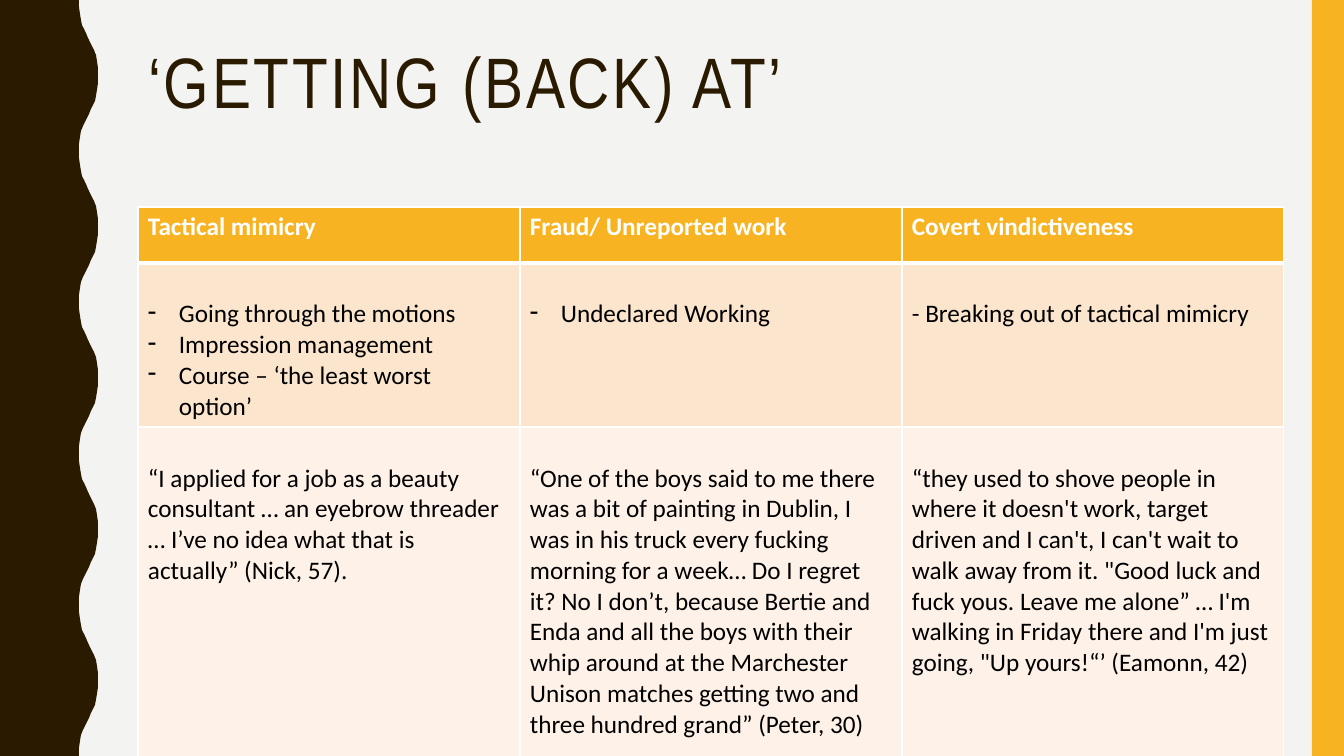
from dataclasses import dataclass
from lxml.etree import SubElement as Sub
from pptx import Presentation
from pptx.dml.color import RGBColor as RGB
from pptx.enum.shapes import MSO_SHAPE as SHAPE
from pptx.enum.text import MSO_ANCHOR as ANCHOR, MSO_AUTO_SIZE as AUTO, PP_ALIGN as ALIGN
from pptx.oxml.ns import qn
from pptx.util import Pt

TITLE = "‘GETTING (BACK) AT’"
HEADS = ["Tactical mimicry", "Fraud/ Unreported work", "Covert vindictiveness"]
POINTS = [
    ("Going through the motions", "Impression management", "Course – ‘the least worst option’"),
    ("Undeclared Working",),
    "- Breaking out of tactical mimicry",
]
QUOTES = [
    "“I applied for a job as a beauty consultant … an eyebrow threader … "
    "I’ve no idea what that is actually” (Nick, 57).",
    "“One of the boys said to me there was a bit of painting in Dublin, I was in his truck "
    "every fucking morning for a week… Do I regret it? No I don’t, because Bertie and Enda "
    "and all the boys with their whip around at the Marchester Unison matches getting two "
    "and three hundred grand” (Peter, 30)",
    "“they used to shove people in where it doesn't work, target driven and I can't, I can't "
    "wait to walk away from it. \"Good luck and fuck yous. Leave me alone” … I'm walking in "
    "Friday there and I'm just going, \"Up yours!“’ (Eamonn, 42)",
]
HALF = [(79, 0), (79, 7), (80, 14), (81, 20), (82, 25), (84, 29), (86, 33), (88, 38),
        (90, 42), (92, 46), (94, 50), (96, 55), (97, 61), (98, 68)]


@dataclass(frozen=True)
class Theme:
    back: str = "F3F3F2"
    dark: str = "2A1A00"
    gold: str = "F8B323"
    peach: str = "FCE5CD"
    cream: str = "FEF2E8"
    white: str = "FFFFFF"
    black: str = "000000"
    head: str = "Arial Narrow"
    body: str = "Calibri"
    big: int = 51
    small: int = 18


T = Theme()
ROWS = [(56, T.gold, HEADS), (163, T.peach, POINTS), (342, T.cream, QUOTES)]
WIDE, HIGH = 1344, 756
EDGE, SUM, WAVES = 79, 177, 10
LEFT, TOP, COL = 138, 207, 382
PAD, SIDE, LINE, HANG = 5, 10, 31, 31
SCALE = 914400 / 100.8


def px(n):
    return round(n * SCALE)


def write(frame, text, font=T.body, size=T.small, color=T.black, bold=False,
          lead=None, track=0, bullet=None):
    lines = text if isinstance(text, tuple) else (text,)
    for i, line in enumerate(lines):
        para = frame.add_paragraph() if i else frame.paragraphs[0]
        para.alignment = ALIGN.LEFT
        if lead:
            para.line_spacing = lead
        run = para.add_run()
        run.text = line
        face = run.font
        face.name, face.size, face.bold = font, Pt(size), bold
        face.color.rgb = RGB.from_string(color)
        if track:
            run._r.get_or_add_rPr().set("spc", str(track * 100))
        if bullet:
            prop = para._p.get_or_add_pPr()
            prop.set("marL", str(px(HANG)))
            prop.set("indent", str(-px(HANG)))
            Sub(prop, qn("a:buChar")).set("char", bullet)


def paint(shape, color):
    shape.shadow.inherit = False
    shape.fill.solid()
    shape.fill.fore_color.rgb = RGB.from_string(color)
    shape.line.fill.background()


def border(cell, **widths):
    prop = cell._tc.get_or_add_tcPr()
    for side in "LRTB":
        line = Sub(prop, qn("a:ln" + side))
        line.set("w", str(Pt(widths.get(side, 1))))
        fill = Sub(line, qn("a:solidFill"))
        Sub(fill, qn("a:srgbClr")).set("val", T.white)


def wave(slide):
    pen = slide.shapes.build_freeform(0, 0, scale=SCALE)
    step = HIGH / WAVES
    edge = [(x if k % 2 == 0 else SUM - x, round(k * step + y))
            for k in range(WAVES) for x, y in HALF]
    pen.add_line_segments(edge + [(EDGE, HIGH), (0, HIGH)], close=True)
    paint(pen.convert_to_shape(), T.dark)


def grid(slide):
    tall = sum(row[0] for row in ROWS)
    table = slide.shapes.add_table(len(ROWS), len(HEADS), px(LEFT), px(TOP),
                                   px(COL * len(HEADS)), px(tall)).table
    table.horz_banding = False
    for col in table.columns:
        col.width = px(COL)
    for r, (high, color, texts) in enumerate(ROWS):
        table.rows[r].height = px(high)
        for c, text in enumerate(texts):
            cell = table.cell(r, c)
            cell.margin_left = cell.margin_right = px(SIDE)
            cell.margin_top = px(PAD + LINE if r else PAD)
            cell.margin_bottom = px(PAD)
            border(cell, T=3 if r == 1 else 1, B=1 if r else 3)
            cell.fill.solid()
            cell.fill.fore_color.rgb = RGB.from_string(color)
            write(cell.text_frame, text, color=T.black if r else T.white, bold=r == 0,
                  bullet="-" if isinstance(text, tuple) else None)


def main():
    deck = Presentation()
    deck.slide_width, deck.slide_height = px(WIDE), px(HIGH)
    slide = deck.slides.add_slide(deck.slide_layouts[5])
    slide.background.fill.solid()
    slide.background.fill.fore_color.rgb = RGB.from_string(T.back)
    wave(slide)
    paint(slide.shapes.add_shape(SHAPE.RECTANGLE, px(1312), 0, px(32), px(HIGH)), T.gold)
    title = slide.shapes.title
    title.left, title.top, title.width, title.height = map(px, (LEFT, 42, 1122, 164))
    frame = title.text_frame
    frame.auto_size, frame.word_wrap = AUTO.NONE, True
    frame.vertical_anchor = ANCHOR.TOP
    write(frame, TITLE, font=T.head, size=T.big, color=T.dark, lead=0.9, track=2)
    grid(slide)
    deck.save("out.pptx")


if __name__ == "__main__":
    main()
